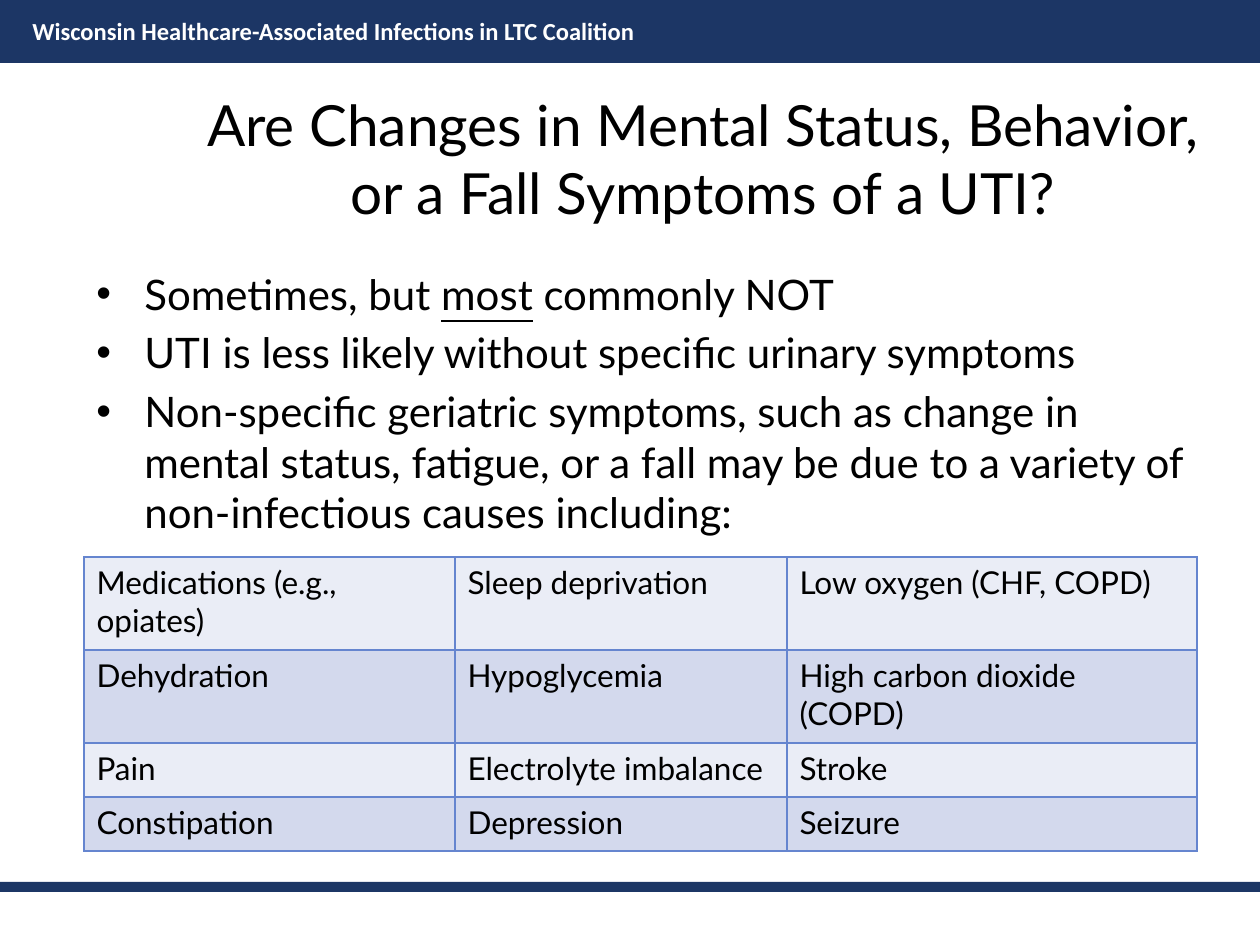
from dataclasses import dataclass

from lxml.etree import SubElement
from pptx import Presentation
from pptx.dml.color import RGBColor
from pptx.enum.shapes import MSO_SHAPE as Shape
from pptx.enum.text import MSO_ANCHOR as Anchor, PP_ALIGN as Align
from pptx.oxml.ns import qn
from pptx.util import Emu, Pt


@dataclass(frozen=True)
class Theme:
    navy: str = "1C3665"
    white: str = "FFFFFF"
    black: str = "000000"
    grid: str = "6585CF"
    bands: tuple = ("EAEDF6", "D3D9ED")
    banner_font: str = "Calibri"
    font: str = "Lato"
    banner_size: float = 14
    title_size: float = 32.4
    body_size: float = 24
    table_size: float = 18


THEME = Theme()
EMU_PER_PX = 914400 / 126
SLIDE_W, SLIDE_H = 1260, 945

BANNER = "Wisconsin Healthcare-Associated Infections in LTC Coalition"
TITLE = "Are Changes in Mental Status, Behavior,\vor a Fall Symptoms of a UTI?"
# Each point is a list of (text, underlined) pieces
POINTS = [
    [("Sometimes, but ", False), ("most", True), (" commonly NOT", False)],
    [("UTI is less likely without specific urinary symptoms", False)],
    [("Non-specific geriatric symptoms, such as change in mental status, "
      "fatigue, or a fall may be due to a variety of non-infectious causes "
      "including:", False)],
]
CAUSES = [
    ["Medications (e.g., opiates)", "Sleep deprivation", "Low oxygen (CHF, COPD)"],
    ["Dehydration", "Hypoglycemia", "High carbon dioxide (COPD)"],
    ["Pain", "Electrolyte imbalance", "Stroke"],
    ["Constipation", "Depression", "Seizure"],
]
COLUMN_WIDTHS = [371, 332, 410]
ROW_HEIGHTS = [93, 93, 54, 54]


def px(length):
    return Emu(round(length * EMU_PER_PX))


def rgb(value):
    return RGBColor.from_string(value)


def add_bar(slide, top, height):
    bar = slide.shapes.add_shape(Shape.RECTANGLE, 0, px(top), px(SLIDE_W), px(height))
    bar.shadow.inherit = False
    bar.fill.solid()
    bar.fill.fore_color.rgb = rgb(THEME.navy)
    bar.line.fill.background()


def add_bullet(paragraph, indent):
    props = paragraph._p.get_or_add_pPr()
    props.set("marL", str(px(indent)))
    props.set("indent", str(-px(indent)))
    SubElement(props, qn("a:buFont"), typeface="Arial")
    SubElement(props, qn("a:buChar"), char="•")


def write_text(frame, paragraphs, *, size, color=THEME.black, font=THEME.font,
               bold=False, align=Align.LEFT, bullet_indent=0, space_before=0):
    """Fill a text frame; a paragraph is a string or a list of pieces."""
    frame.word_wrap = True
    for index, content in enumerate(paragraphs):
        paragraph = frame.paragraphs[0] if index == 0 else frame.add_paragraph()
        paragraph.alignment = align
        if bullet_indent:
            add_bullet(paragraph, bullet_indent)
        if index and space_before:
            paragraph.space_before = Pt(space_before)
        pieces = [(content, False)] if isinstance(content, str) else content
        for text, underlined in pieces:
            for number, line in enumerate(text.split("\v")):
                if number:
                    paragraph.add_line_break()
                run = paragraph.add_run()
                run.text = line
                run.font.name = font
                run.font.size = Pt(size)
                run.font.bold = bold
                run.font.underline = underlined
                run.font.color.rgb = rgb(color)


def add_text(slide, box, paragraphs, *, anchor=Anchor.TOP, **text_format):
    frame = slide.shapes.add_textbox(*map(px, box)).text_frame
    frame.vertical_anchor = anchor
    write_text(frame, paragraphs, **text_format)


def set_borders(cell, color, width):
    props = cell._tc.get_or_add_tcPr()
    for position, side in enumerate(("lnL", "lnR", "lnT", "lnB")):
        border = props.makeelement(qn(f"a:{side}"), {"w": str(Pt(width))})
        fill = SubElement(border, qn("a:solidFill"))
        SubElement(fill, qn("a:srgbClr"), val=color)
        props.insert(position, border)


def add_causes_table(slide, left, top):
    table = slide.shapes.add_table(
        len(ROW_HEIGHTS), len(COLUMN_WIDTHS), px(left), px(top),
        px(sum(COLUMN_WIDTHS)), px(sum(ROW_HEIGHTS))).table
    table.first_row = False
    table.horz_banding = False
    for column, width in zip(table.columns, COLUMN_WIDTHS):
        column.width = px(width)
    for row_index, (row, height) in enumerate(zip(table.rows, ROW_HEIGHTS)):
        row.height = px(height)
        for cell, cause in zip(row.cells, CAUSES[row_index]):
            cell.fill.solid()
            cell.fill.fore_color.rgb = rgb(THEME.bands[row_index % 2])
            set_borders(cell, THEME.grid, 1)
            write_text(cell.text_frame, [cause], size=THEME.table_size)


def main():
    deck = Presentation()
    deck.slide_width, deck.slide_height = px(SLIDE_W), px(SLIDE_H)
    slide = deck.slides.add_slide(deck.slide_layouts[6])

    # Footer rule and banner
    add_bar(slide, 882, 10)
    add_bar(slide, 0, 63)
    add_text(slide, (20, 10, 767, 43), [BANNER], size=THEME.banner_size,
             font=THEME.banner_font, color=THEME.white, bold=True)

    # Title and points
    add_text(slide, (157, 63, 1092, 189), [TITLE], size=THEME.title_size,
             align=Align.CENTER, anchor=Anchor.MIDDLE)
    add_text(slide, (84, 262, 1134, 567), POINTS, size=THEME.body_size,
             bullet_indent=48, space_before=4.8)

    # Non-infectious causes
    add_causes_table(slide, 84, 557)

    deck.save("out.pptx")


if __name__ == "__main__":
    main()
